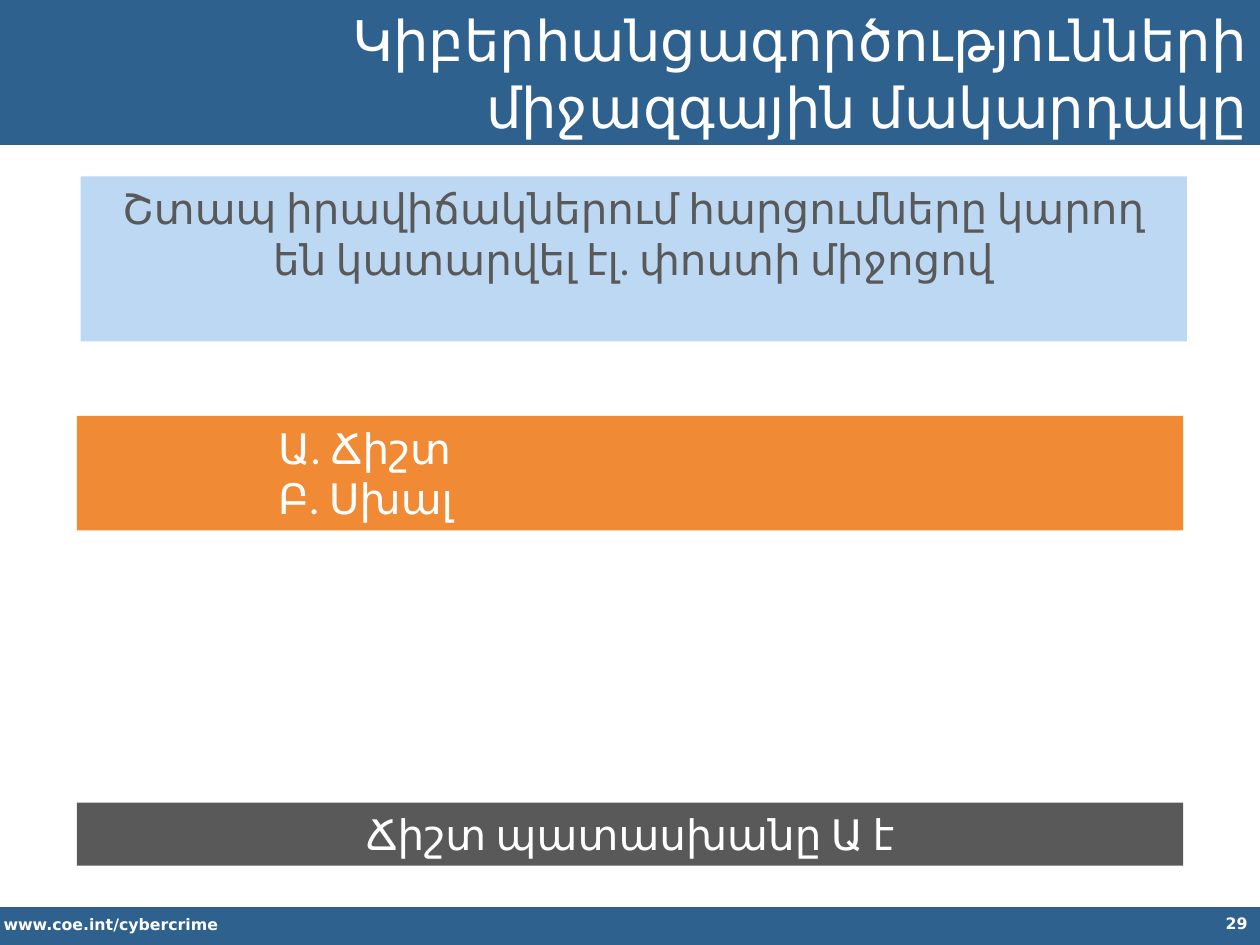
from dataclasses import dataclass

from pptx import Presentation
from pptx.dml.color import RGBColor
from pptx.enum.shapes import MSO_SHAPE
from pptx.enum.text import MSO_ANCHOR, MSO_AUTO_SIZE, PP_ALIGN
from pptx.util import Inches, Pt


@dataclass(frozen=True)
class Theme:
    """Colours, fonts and type sizes of the deck."""
    navy: str = "2F618F"
    sky: str = "BDD8F3"
    orange: str = "F08A34"
    grey: str = "595959"
    white: str = "FFFFFF"
    font: str = "Calibri"
    footer_font: str = "DejaVu Sans"
    title: int = 32
    body: int = 24
    footer: int = 9


class QuizSlide:
    """Draws quiz elements on a grid of 100 columns by 75 rows."""

    def __init__(self, prs, theme):
        """Add a title-only slide and measure its grid."""
        self.theme = theme
        self.s = prs.slides.add_slide(prs.slide_layouts[5])
        self.col = prs.slide_width / 100
        self.row = prs.slide_height / 75

    def box(self, x, y, w, h):
        """Turn grid units into slide lengths."""
        return (int(x * self.col), int(y * self.row),
                int(w * self.col), int(h * self.row))

    def fill(self, sp, color):
        """Give a shape a solid fill."""
        sp.fill.solid()
        sp.fill.fore_color.rgb = RGBColor.from_string(color)

    def set_text(self, sp, text, size, color, align, font=None, bold=False,
                 anchor=MSO_ANCHOR.TOP, level=0):
        """Set and format the text of a shape."""
        tf = sp.text_frame
        tf.text = text
        tf.word_wrap = True
        tf.auto_size = MSO_AUTO_SIZE.NONE
        tf.vertical_anchor = anchor
        for p in tf.paragraphs:
            p.level = level
            p.alignment = align
            if level:
                indent = Inches(0.5 * level)
                p._p.get_or_add_pPr().set("marL", str(indent))
            for r in p.runs:
                r.font.name = font or self.theme.font
                r.font.size = Pt(size)
                r.font.bold = bold
                r.font.color.rgb = RGBColor.from_string(color)

    def bar(self, grid, color):
        """Draw a plain filled rectangle."""
        sp = self.s.shapes.add_shape(MSO_SHAPE.RECTANGLE, *self.box(*grid))
        sp.shadow.inherit = False
        sp.line.fill.background()
        self.fill(sp, color)
        return sp

    def panel(self, grid, color, text, ink, align=PP_ALIGN.CENTER, level=0):
        """Draw a filled rectangle with body text."""
        sp = self.bar(grid, color)
        self.set_text(sp, text, self.theme.body, ink, align, level=level)

    def footer(self, grid, text, align):
        """Add a small bold footer text."""
        sp = self.s.shapes.add_textbox(*self.box(*grid))
        self.set_text(sp, text, self.theme.footer, self.theme.white, align,
                      font=self.theme.footer_font, bold=True)

    def title(self, grid, text, band):
        """Place the title in front of its band."""
        sp = self.s.shapes.title
        band.element.addnext(sp.element)
        sp.left, sp.top, sp.width, sp.height = self.box(*grid)
        self.fill(sp, self.theme.navy)
        self.set_text(sp, text, self.theme.title, self.theme.white,
                      PP_ALIGN.RIGHT, anchor=MSO_ANCHOR.MIDDLE)


def main():
    """Build the quiz slide."""
    prs = Presentation()
    prs.slide_width, prs.slide_height = Inches(10), Inches(7.5)
    t = Theme()
    quiz = QuizSlide(prs, t)
    left, width = 6.1, 87.8

    header = quiz.bar((0, -0.3, 100, 11.8), t.navy)
    quiz.title((22, 0.7, 78, 10.1),
               "Կիբերհանցագործությունների միջազգային մակարդակը", header)
    quiz.bar((0, 72, 100, 3.2), t.navy)
    quiz.footer((-0.7, 72.1, 35.2, 2.5), "www.coe.int/cybercrime",
                PP_ALIGN.LEFT)
    quiz.footer((76.7, 72, 23.3, 3), "29", PP_ALIGN.RIGHT)

    quiz.panel((6.4, 14, width, 13.1), t.sky,
               "Շտապ իրավիճակներում հարցումները կարող են կատարվել "
               "էլ. փոստի միջոցով", t.grey)
    quiz.panel((left, 33, width, 9.1), t.orange, "Ա. Ճիշտ\nԲ. Սխալ",
               t.white, PP_ALIGN.LEFT, level=3)
    quiz.panel((left, 63.7, width, 5), t.grey, "Ճիշտ պատասխանը Ա է", t.white)

    prs.save("out.pptx")


if __name__ == "__main__":
    main()
